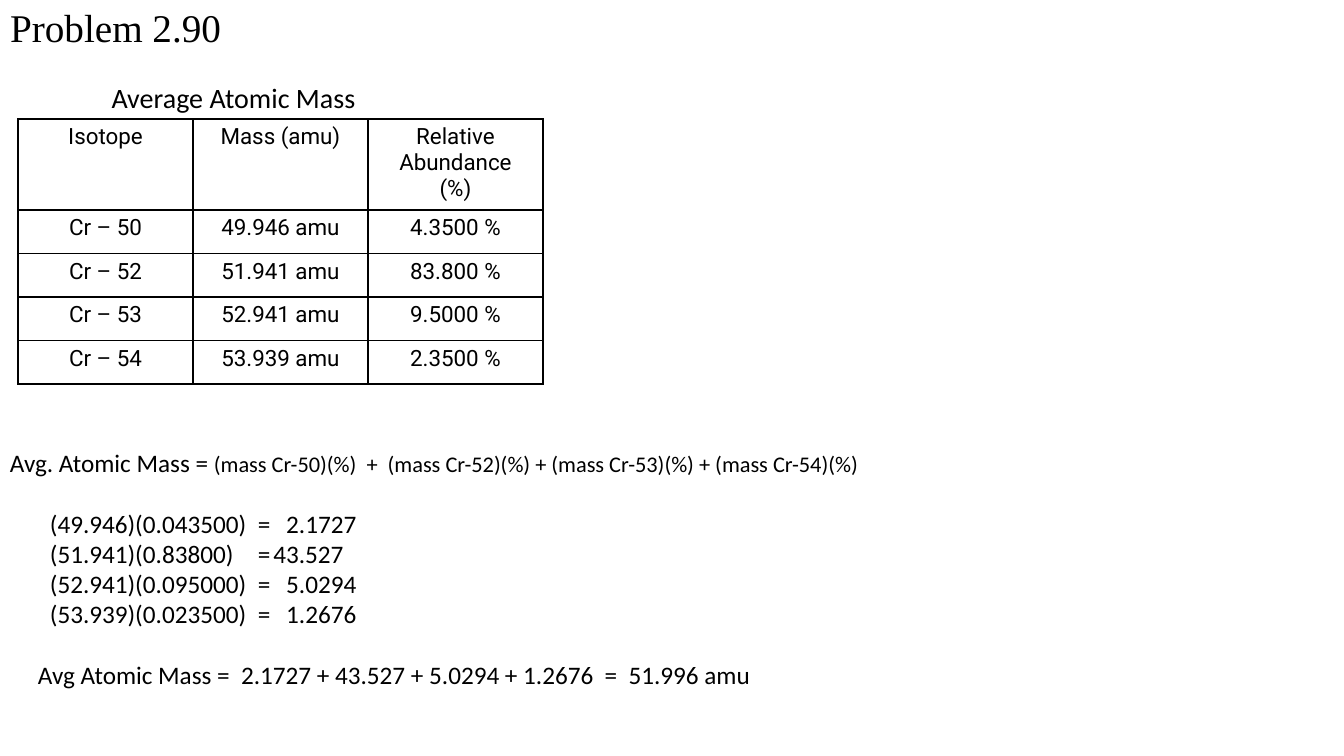
"""Build a slide that works out the average atomic mass of chromium."""
from lxml import etree
from pptx import Presentation
from pptx.dml.color import RGBColor
from pptx.enum.text import MSO_ANCHOR, PP_ALIGN
from pptx.oxml.ns import qn
from pptx.util import Emu, Pt

LEFT, CENTER = PP_ALIGN.LEFT, PP_ALIGN.CENTER
TOP, MIDDLE = MSO_ANCHOR.TOP, MSO_ANCHOR.MIDDLE
COLORS = {"ink": "000000", "paper": "FFFFFF"}

TITLE = "Problem 2.90"
CAPTION = "Average Atomic Mass"
ISOTOPES = [
    ("Isotope", "Mass (amu)", "Relative Abundance (%)"),
    ("Cr – 50", "49.946 amu", "4.3500 %"),
    ("Cr – 52", "51.941 amu", "83.800 %"),
    ("Cr – 53", "52.941 amu", "9.5000 %"),
    ("Cr – 54", "53.939 amu", "2.3500 %"),
]
FORMULA = [
    ("Avg. Atomic Mass = ", 18),
    ("(mass Cr-50)(%)  +  (mass Cr-52)(%) + (mass Cr-53)(%) + (mass Cr-54)(%)", 16),
]
TERMS = [
    ("(49.946)(0.043500)", "2.1727"),
    ("(51.941)(0.83800)", "43.527"),
    ("(52.941)(0.095000)", "5.0294"),
    ("(53.939)(0.023500)", "1.2676"),
]
RESULT = "Avg Atomic Mass =  2.1727 + 43.527 + 5.0294 + 1.2676  =  51.996 amu"

TERM_TABS = [(40, "l"), (248, "l"), (289, "dec")]
RESULT_TABS = [(28, "l")]
TABLE = (18, 119, 525, 265)
HEAD = 91
GAP = 22


def px(n):
    return Emu(round(n * 9144 / 1.008))


def write(para, text, size=18, font="Calibri", align=LEFT, gap=0, tabs=()):
    para.alignment = align
    para.space_before = Pt(gap)
    run = para.add_run()
    run.text = text
    run.font.size = Pt(size)
    run.font.name = font
    run.font.color.rgb = RGBColor.from_string(COLORS["ink"])
    if tabs:
        stops = etree.SubElement(para._p.get_or_add_pPr(), qn("a:tabLst"))
        for pos, kind in tabs:
            etree.SubElement(stops, qn("a:tab"), pos=str(px(pos)), algn=kind)


def add_box(slide, *place, anchor=TOP, wrap=True):
    frame = slide.shapes.add_textbox(*map(px, place)).text_frame
    frame.word_wrap = wrap
    frame.vertical_anchor = anchor
    return frame


def add_edges(cell):
    props = cell._tc.get_or_add_tcPr()
    for spot, side in enumerate(("lnL", "lnR", "lnT", "lnB")):
        line = etree.Element(qn("a:" + side), w=str(Pt(1)))
        fill = etree.SubElement(line, qn("a:solidFill"))
        etree.SubElement(fill, qn("a:srgbClr"), val=COLORS["ink"])
        props.insert(spot, line)


def add_grid(slide):
    shape = slide.shapes.add_table(len(ISOTOPES), len(ISOTOPES[0]), *map(px, TABLE))
    grid = shape.table
    body = (TABLE[3] - HEAD) / (len(ISOTOPES) - 1)
    for r, row in enumerate(ISOTOPES):
        grid.rows[r].height = px(body if r else HEAD)
        for c, text in enumerate(row):
            cell = grid.cell(r, c)
            cell.margin_left = cell.margin_right = px(13)
            cell.margin_top = cell.margin_bottom = px(5)
            cell.fill.solid()
            cell.fill.fore_color.rgb = RGBColor.from_string(COLORS["paper"])
            add_edges(cell)
            write(cell.text_frame.paragraphs[0], text, size=16, font="Roboto", align=CENTER)


def main():
    deck = Presentation()
    deck.slide_width, deck.slide_height = px(1344), px(756)
    slide = deck.slides.add_slide(deck.slide_layouts[5])

    title = slide.shapes.title
    title.left, title.top, title.width, title.height = map(px, (0, -2, 234, 57))
    title.text_frame.word_wrap = False
    title.text_frame.vertical_anchor = TOP
    write(title.text_frame.paragraphs[0], TITLE, size=28, font="Times New Roman")

    label = add_box(slide, 100, 75, 267, 44, anchor=MIDDLE, wrap=False)
    write(label.paragraphs[0], CAPTION, size=20, align=CENTER)
    add_grid(slide)

    work = add_box(slide, 0, 442, 1344, 285)
    for text, size in FORMULA:
        write(work.paragraphs[0], text, size=size)
    for i, (term, value) in enumerate(TERMS):
        line = f"\t{term}\t=\t{value}"
        write(work.add_paragraph(), line, gap=0 if i else GAP, tabs=TERM_TABS)
    write(work.add_paragraph(), "\t" + RESULT, gap=GAP, tabs=RESULT_TABS)
    deck.save("out.pptx")


if __name__ == "__main__":
    main()
